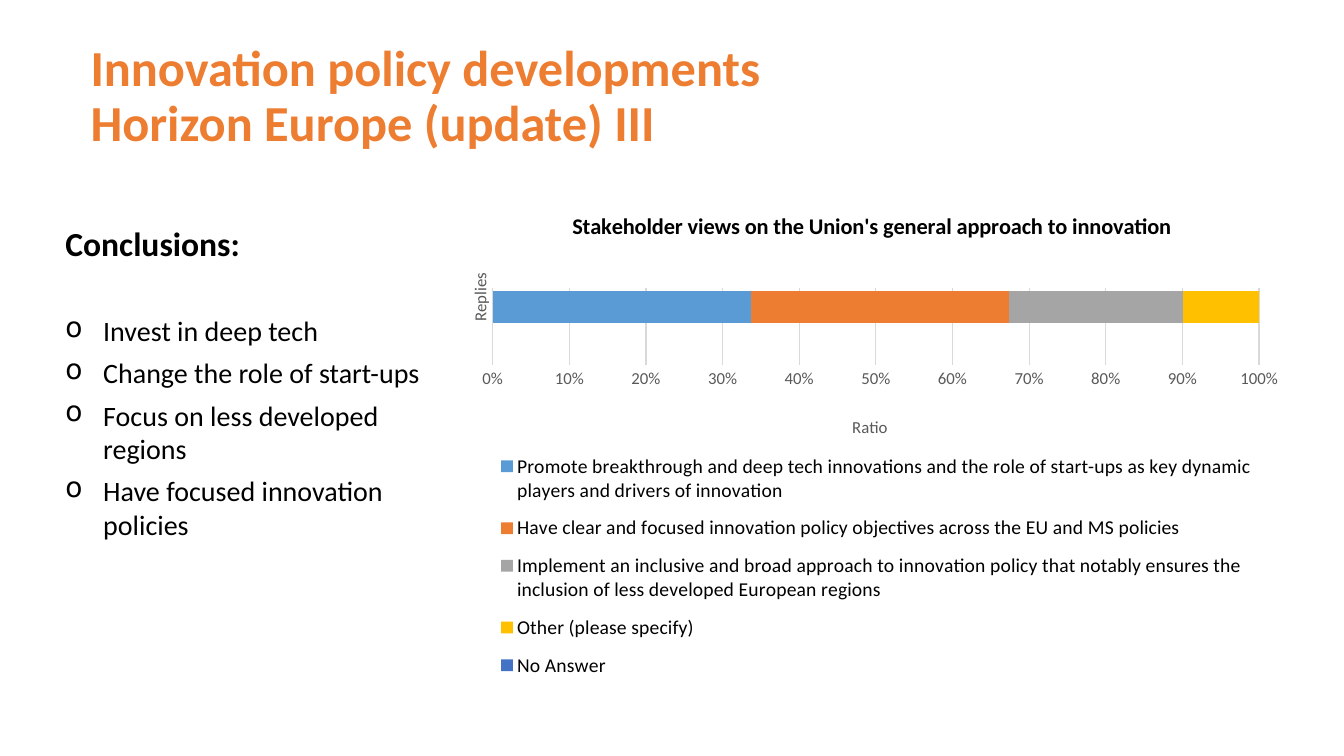
from lxml import etree
from pptx import Presentation
from pptx.chart.data import CategoryChartData
from pptx.dml.color import RGBColor
from pptx.enum.chart import XL_CHART_TYPE, XL_LEGEND_POSITION, XL_TICK_MARK
from pptx.enum.text import MSO_ANCHOR
from pptx.oxml.ns import qn
from pptx.util import Pt

STACKED_BAR = XL_CHART_TYPE.BAR_STACKED_100
LEGEND_BOTTOM = XL_LEGEND_POSITION.BOTTOM
NO_TICKS = XL_TICK_MARK.NONE
ANCHOR_BOTTOM = MSO_ANCHOR.BOTTOM

FONT = "Calibri"
COLORS = {
    "text": "000000", "title": "ED7D31", "axis": "595959", "grid": "D9D9D9",
    "blue": "5B9BD5", "orange": "ED7D31", "gray": "A5A5A5",
    "yellow": "FFC000", "navy": "4472C4",
}
CONCLUSIONS = [
    "Invest in deep tech",
    "Change the role of start-ups",
    "Focus on less developed regions",
    "Have focused innovation policies",
]
REPLIES = [
    ("Promote breakthrough and deep tech innovations and the role of start-ups "
     "as key dynamic players and drivers of innovation", 34, "blue"),
    ("Have clear and focused innovation policy objectives across the EU and MS "
     "policies", 34, "orange"),
    ("Implement an inclusive and broad approach to innovation policy that notably "
     "ensures the inclusion of less developed European regions", 23, "gray"),
    ("Other (please specify)", 10, "yellow"),
    ("No Answer", 0, "navy"),
]


def color(name):
    return RGBColor.from_string(COLORS[name])


def style_font(font, size, name="text", bold=False):
    font.name = FONT
    font.size = Pt(size)
    font.bold = bold
    font.color.rgb = color(name)


def add_text_frame(page, left, top, width, height):
    box = page.shapes.add_textbox(Pt(left), Pt(top), Pt(width), Pt(height))
    box.text_frame.word_wrap = True
    return box.text_frame


def add_title(page, text):
    frame = add_text_frame(page, 57.6, 71.3, 828, 37.4)
    frame.vertical_anchor = ANCHOR_BOTTOM
    frame.margin_bottom = 0
    para = frame.paragraphs[0]
    para.text = text
    para.line_spacing = 0.9
    style_font(para.font, 36, "title", True)


def add_bullet(para):
    props = para._p.get_or_add_pPr()
    props.set("marL", str(Pt(27)))
    props.set("indent", str(-Pt(27)))
    etree.SubElement(props, qn("a:buChar")).set("char", "o")


def add_conclusions(page, heading, items):
    frame = add_text_frame(page, 39.6, 155.5, 270, 363.6)
    para = frame.paragraphs[0]
    para.text = heading
    para.space_after = Pt(6)
    style_font(para.font, 24, bold=True)
    for index, item in enumerate(items):
        para = frame.add_paragraph()
        para.text = item
        if index == 0:
            para.space_before = Pt(30.4)
        para.space_after = Pt(6)
        add_bullet(para)
        style_font(para.font, 20)


def place(element, after, inner=False, **fractions):
    """Set a manual layout, in fractions of the chart area."""
    for old in element.findall(qn("c:layout")):
        element.remove(old)
    position = element.index(element.find(qn(after))) + 1 if after else 0
    layout = etree.Element(qn("c:layout"))
    element.insert(position, layout)
    manual = etree.SubElement(layout, qn("c:manualLayout"))
    if inner:
        etree.SubElement(manual, qn("c:layoutTarget")).set("val", "inner")
    for mode in ("xMode", "yMode"):
        etree.SubElement(manual, qn("c:" + mode)).set("val", "edge")
    for key, value in fractions.items():
        etree.SubElement(manual, qn("c:" + key)).set("val", str(value))


def set_title(title, text, size, name, bold, x, y):
    para = title.text_frame.paragraphs[0]
    para.text = text
    style_font(para.font, size, name, bold)
    place(title._element, "c:tx", x=x, y=y)


def add_replies_chart(page):
    data = CategoryChartData()
    data.categories = ["1", "2"]
    for label, value, _ in REPLIES:
        data.add_series(label, (None, value))
    chart = page.shapes.add_chart(
        STACKED_BAR, Pt(316.8), Pt(132.5), Pt(606.2), Pt(372.2), data).chart
    style_font(chart.font, 10)

    # Bars
    plot = chart.plots[0]
    plot.gap_width = 20
    plot.overlap = 100
    plot.vary_by_categories = False
    for series, (_, _, name) in zip(plot.series, REPLIES):
        series.format.fill.solid()
        series.format.fill.fore_color.rgb = color(name)
    place(chart._chartSpace.chart.plotArea, None, inner=True,
          x=0.058, y=0.197, w=0.903, h=0.147)

    # Axes
    values = chart.value_axis
    values.major_tick_mark = values.minor_tick_mark = NO_TICKS
    values.format.line.fill.background()
    values.major_gridlines.format.line.width = Pt(0.75)
    values.major_gridlines.format.line.color.rgb = color("grid")
    values.tick_labels.number_format = "0%"
    values.tick_labels.number_format_is_linked = False
    style_font(values.tick_labels.font, 12, "axis")
    set_title(values.axis_title, "Ratio", 12, "axis", False, 0.478, 0.437)
    categories = chart.category_axis
    categories.visible = False
    set_title(categories.axis_title, "Replies", 12, "axis", False, 0.026, 0.162)
    body = categories.axis_title.text_frame._txBody.bodyPr
    body.set("rot", "-5400000")
    body.set("vert", "horz")

    # Title and legend
    set_title(chart.chart_title,
              "Stakeholder views on the Union's general approach to innovation",
              16, "text", True, 0.147, 0.04)
    chart.has_legend = True
    chart.legend.position = LEGEND_BOTTOM
    chart.legend.include_in_layout = False
    style_font(chart.legend.font, 14)
    place(chart.legend._element, "c:legendPos", x=0.06, y=0.49, w=0.9, h=0.48)


def main():
    deck = Presentation()
    deck.slide_width, deck.slide_height = Pt(960), Pt(540)
    page = deck.slides.add_slide(deck.slide_layouts[6])
    add_title(page, "Innovation policy developments\vHorizon Europe (update) III")
    add_conclusions(page, "Conclusions:", CONCLUSIONS)
    add_replies_chart(page)
    deck.save("out.pptx")


if __name__ == "__main__":
    main()
